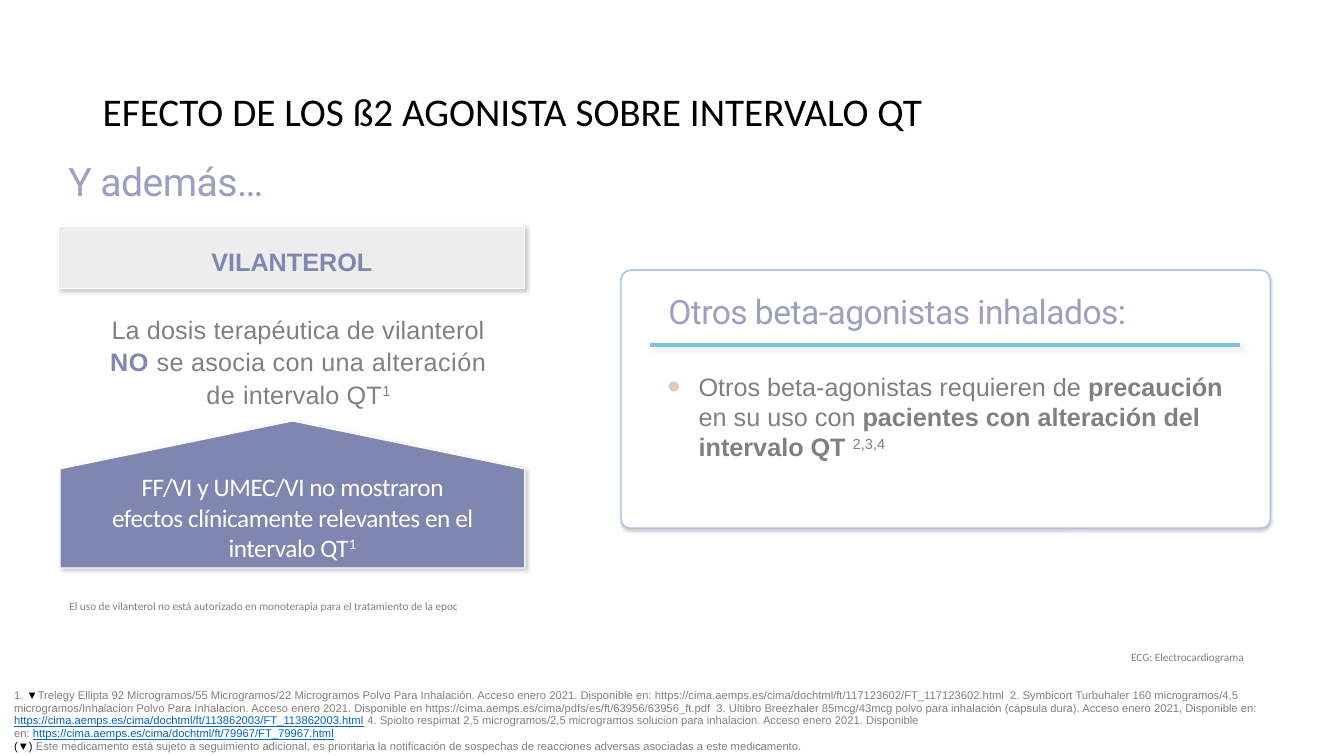
"""Build the slide on beta-2 agonists and the QT interval."""
import pptx
import pptx.dml.color
import pptx.enum.shapes
import pptx.enum.text
import pptx.oxml
import pptx.oxml.ns
import pptx.util
from dataclasses import dataclass

Inches = pptx.util.Inches
SHAPES = pptx.enum.shapes.MSO_SHAPE
ALIGN = pptx.enum.text.PP_ALIGN
ANCHOR = pptx.enum.text.MSO_ANCHOR


@dataclass(frozen=True)
class Theme:
    """Colours, fonts and type sizes of the slide."""
    black: str = "000000"
    white: str = "FFFFFF"
    grey: str = "808080"
    pale: str = "EDEDED"
    purple: str = "7F86AF"
    lilac: str = "9BA0C1"
    frame: str = "ABC0E4"
    rule: str = "7FC1DB"
    rule_shadow: str = "BFBFBF"
    bullet: str = "E1CAB7"
    link: str = "0563C1"
    body: str = "Arial"
    plain: str = "Calibri"
    display: str = "Roboto"
    title_size: int = 28
    heading_size: int = 24
    body_size: int = 18
    note_size: int = 8


THEME = Theme()
BOLD = {"bold": True}
BLACK = {"color": THEME.black}
LINK = {"color": THEME.link, "underline": True}
SUPER = {"baseline": 30}

TITLE = [("EFECTO DE LOS ß2 AGONISTA SOBRE INTERVALO QT", {})]
SUBTITLE = [("Y además…", {})]
DRUG = [("VILANTEROL", BOLD)]
DOSE = [
    ("La dosis terapéutica de vilanterol ", {"spacing": 0.1}),
    ("NO ", {"bold": True, "color": THEME.purple, "spacing": 0.4}),
    ("se asocia con una ", {"spacing": 0.2}),
    ("alteración de ", {"spacing": 0.4}),
    ("intervalo QT", {"spacing": 0.1}),
    ("1", SUPER),
]
FINDING = [
    ("FF/VI y UMEC/VI no mostraron efectos clínicamente relevantes en el intervalo QT", {}),
    ("1", SUPER),
]
USE_NOTE = [("El uso de vilanterol no está autorizado en monoterapia para el tratamiento de la epoc", {})]
ECG_NOTE = [("ECG: Electrocardiograma", {})]
OTHERS = [("Otros beta-agonistas inhalados:", {})]
CAUTION = [
    ("Otros beta-agonistas requieren de ", {}),
    ("precaución", BOLD),
    (" en su uso con ", {}),
    ("pacientes con alteración del intervalo QT ", BOLD),
    ("2,3,4", SUPER),
]
REFERENCES = [
    [
        ("1. ", {}),
        ("▼", BLACK),
        ("Trelegy Ellipta 92 Microgramos/55 Microgramos/22 Microgramos Polvo Para Inhalación. "
         "Acceso enero 2021. Disponible en: "
         "https://cima.aemps.es/cima/dochtml/ft/117123602/FT_117123602.html  "
         "2. Symbicort Turbuhaler 160 microgramos/4,5 microgramos/Inhalacion Polvo Para Inhalacion. "
         "Acceso enero 2021. Disponible en https://cima.aemps.es/cima/pdfs/es/ft/63956/63956_ft.pdf  "
         "3. Ultibro Breezhaler 85mcg/43mcg polvo para inhalación (cápsula dura). "
         "Acceso enero 2021, Disponible en: ", {}),
        ("https://cima.aemps.es/cima/dochtml/ft/113862003/FT_113862003.html", LINK),
        (" 4. Spiolto respimat 2,5 microgramos/2,5 microgramos solucion para inhalacion. "
         "Acceso enero 2021. Disponible", {}),
    ],
    [
        ("en: ", {}),
        ("https://cima.aemps.es/cima/dochtml/ft/79967/FT_79967.html", LINK),
    ],
    [
        ("(▼) ", BLACK),
        ("Este medicamento está sujeto a seguimiento adicional, es prioritaria la notificación de "
         "sospechas de reacciones adversas asociadas a este medicamento.", {}),
    ],
]


def rgb(color):
    return pptx.dml.color.RGBColor.from_string(color)


def write(paragraph, runs, size, font, color, spacing=0):
    for text, style in runs:
        run = paragraph.add_run()
        run.text = text
        run.font.size = pptx.util.Pt(size)
        run.font.name = font
        run.font.bold = style.get("bold", False)
        run.font.underline = style.get("underline", False)
        run.font.color.rgb = rgb(style.get("color", color))
        properties = run._r.get_or_add_rPr()
        properties.set("spc", str(round(style.get("spacing", spacing) * 100)))
        if "baseline" in style:
            properties.set("baseline", str(style["baseline"] * 1000))


def add_text(slide, box, runs, size, font, color, insets=(0, 0, 0, 0), align=ALIGN.LEFT,
             line_spacing=1.0, anchor=ANCHOR.TOP, spacing=0):
    frame = slide.shapes.add_textbox(*map(Inches, box)).text_frame
    frame.word_wrap = True
    frame.vertical_anchor = anchor
    frame.margin_left, frame.margin_top, frame.margin_right, frame.margin_bottom = map(Inches, insets)
    paragraph = frame.paragraphs[0]
    paragraph.alignment = align
    paragraph.line_spacing = line_spacing
    write(paragraph, runs, size, font, color, spacing)
    return paragraph


def add_shadow(shape, color, blur, distance, angle):
    shape._element.spPr.append(pptx.oxml.parse_xml(
        f'<a:effectLst {pptx.oxml.ns.nsdecls("a")}>'
        f'<a:outerShdw blurRad="{blur * 12700}" dist="{distance * 12700}" dir="{angle * 60000}" '
        f'algn="tl" rotWithShape="0"><a:srgbClr val="{color}"><a:alpha val="40000"/></a:srgbClr>'
        '</a:outerShdw></a:effectLst>'))


def add_panel(slide, kind, box, adjustments, fill, line, shadow, rotation=0):
    panel = slide.shapes.add_shape(kind, *map(Inches, box))
    for index, value in enumerate(adjustments):
        panel.adjustments[index] = value
    panel.rotation = rotation
    panel.fill.solid()
    panel.fill.fore_color.rgb = rgb(fill)
    panel.line.color.rgb = rgb(line)
    panel.line.width = pptx.util.Pt(1)
    add_shadow(panel, THEME.grey, *shadow)


def add_bullet(paragraph):
    properties = paragraph._p.get_or_add_pPr()
    indent = Inches(0.31)
    properties.set("marL", str(indent))
    properties.set("indent", str(-indent))
    for xml in (f'<a:buClr {{}}><a:srgbClr val="{THEME.bullet}"/></a:buClr>',
                '<a:buSzPct {} val="150000"/>', '<a:buFont {} typeface="Arial"/>',
                '<a:buChar {} char="•"/>'):
        properties.append(pptx.oxml.parse_xml(xml.format(pptx.oxml.ns.nsdecls("a"))))


def add_references(slide):
    table = slide.shapes.add_table(1, 1, *map(Inches, (0.04, 6.79, 12.76, 0.32))).table
    table.first_row = table.horz_banding = False
    cell = table.cell(0, 0)
    cell.fill.background()
    for index, runs in enumerate(REFERENCES):
        paragraph = cell.text_frame.add_paragraph() if index else cell.text_frame.paragraphs[0]
        write(paragraph, runs, THEME.note_size, THEME.body, THEME.grey)


def add_rule(slide):
    rule = slide.shapes.add_connector(pptx.enum.shapes.MSO_CONNECTOR.STRAIGHT,
                                      *map(Inches, (6.45, 3.42, 12.3, 3.42)))
    rule.line.color.rgb = rgb(THEME.rule)
    rule.line.width = pptx.util.Pt(2.75)
    add_shadow(rule, THEME.rule_shadow, 4, 3, 45)


def main():
    deck = pptx.Presentation()
    deck.slide_width, deck.slide_height = Inches(13.33), Inches(7.5)
    slide = deck.slides.add_slide(deck.slide_layouts[6])
    body = (THEME.body_size, THEME.body)
    note = (THEME.note_size, THEME.plain, THEME.grey, (0.1, 0.08, 0.1, 0.08))
    side = (0.1, 0, 0.1, 0)

    add_panel(slide, SHAPES.PENTAGON, (0.58, 2.24, 4.62, 0.62), [0], THEME.pale, THEME.white, (3, 2, 45))
    add_panel(slide, SHAPES.PENTAGON, (2.17, 2.6, 1.46, 4.61), [0.325], THEME.purple, THEME.white,
              (3, 2, 45), rotation=270)
    add_references(slide)
    add_text(slide, (0.87, 2.44, 4.05, 0.29), DRUG, *body, THEME.purple, align=ALIGN.CENTER)
    add_text(slide, (1.08, 4.68, 3.64, 1.11), FINDING, THEME.body_size, THEME.plain, THEME.white,
             align=ALIGN.CENTER, spacing=-0.3)
    add_text(slide, (0.59, 5.88, 4.62, 0.43), USE_NOTE, *note)

    add_panel(slide, SHAPES.ROUND_2_SAME_RECTANGLE, (6.16, 2.68, 6.44, 2.56), [0.038, 0.034],
              THEME.white, THEME.frame, (2, 1, 90))
    add_bullet(add_text(slide, (6.42, 3.56, 5.93, 1.98), CAUTION, *body, THEME.grey, (0.2, 0.12, 0.1, 0.05)))
    add_text(slide, (6.53, 2.89, 5.84, 0.4), OTHERS, THEME.heading_size, THEME.display, THEME.lilac,
             side, spacing=-0.4)
    add_rule(slide)

    add_text(slide, (0.92, 0.4, 11.5, 1.45), TITLE, THEME.title_size, THEME.plain, THEME.black,
             (0.1, 0.05, 0.1, 0.05), line_spacing=0.9, anchor=ANCHOR.MIDDLE)
    add_text(slide, (0.58, 1.56, 6.56, 0.47), SUBTITLE, THEME.title_size, THEME.display, THEME.lilac,
             side, spacing=-0.4)
    add_text(slide, (1, 3.09, 3.92, 0.96), DOSE, *body, THEME.grey, align=ALIGN.CENTER, line_spacing=1.08)
    add_text(slide, (11.12, 6.38, 1.5, 0.29), ECG_NOTE, *note)
    deck.save("out.pptx")


if __name__ == "__main__":
    main()
